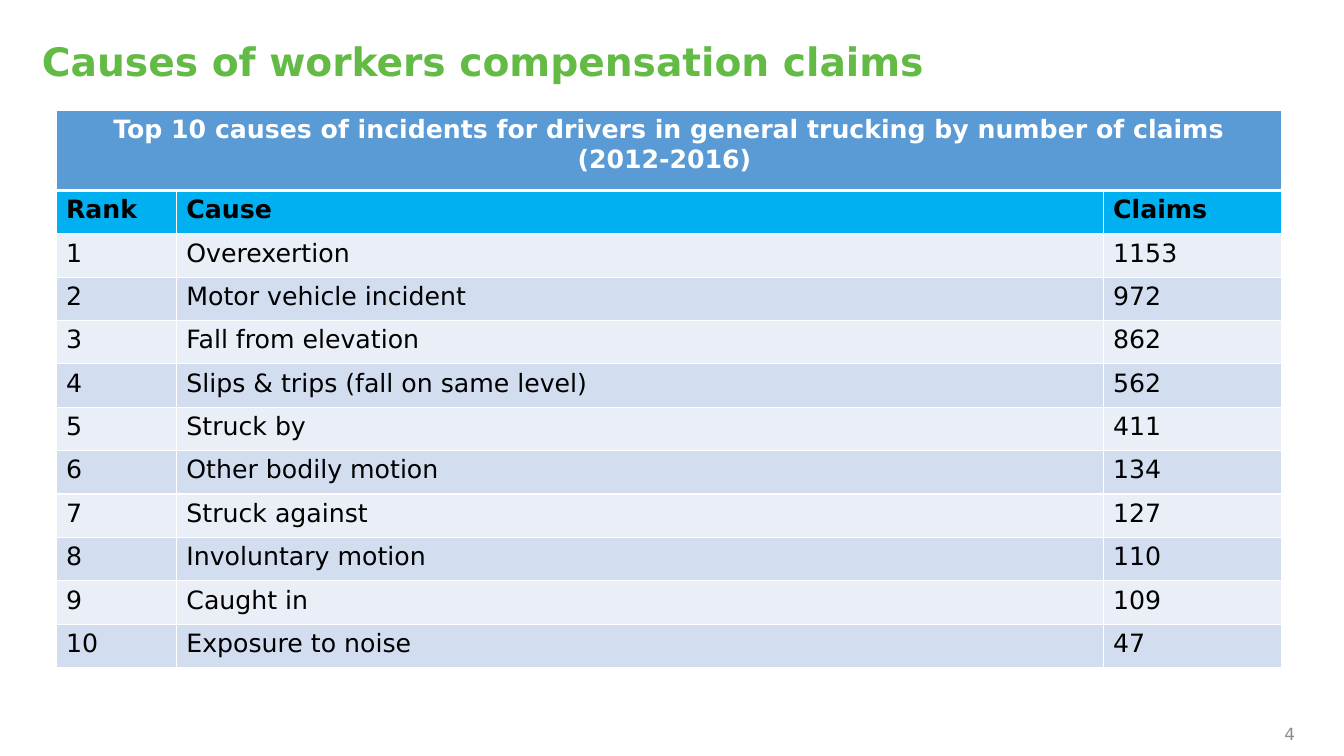
from lxml import etree
from pptx import Presentation
from pptx.dml.color import RGBColor
from pptx.enum import text
from pptx.oxml import ns
from pptx.util import Pt

FONT = "DejaVu Sans"
WHITE = RGBColor(0xFF, 0xFF, 0xFF)
BLACK = RGBColor(0x00, 0x00, 0x00)
GREEN = RGBColor(0x63, 0xBB, 0x46)
GRAY = RGBColor(0x8C, 0x8C, 0x8C)
BLUE = RGBColor(0x5B, 0x9B, 0xD5)
CYAN = RGBColor(0x00, 0xB0, 0xF0)
BANDS = (RGBColor(0xEA, 0xEF, 0xF7), RGBColor(0xD2, 0xDE, 0xEF))

CAPTION = "Top 10 causes of incidents for drivers in general trucking by number of claims (2012-2016) "
HEADINGS = ("Rank", "Cause", "Claims")
CLAIMS = (
    ("Overexertion", 1153),
    ("Motor vehicle incident", 972),
    ("Fall from elevation", 862),
    ("Slips & trips (fall on same level)", 562),
    ("Struck by", 411),
    ("Other bodily motion", 134),
    ("Struck against", 127),
    ("Involuntary motion", 110),
    ("Caught in", 109),
    ("Exposure to noise", 47),
)
COLUMN_WIDTHS = (86, 662, 127.5)
CAPTION_HEIGHT, ROW_HEIGHT = 57, 31


def set_attrs(obj, values):
    for name, value in values.items():
        setattr(obj, name, value)


def write(tf, words, size, color, bold=False, align=text.PP_ALIGN.LEFT):
    p = tf.paragraphs[0]
    p.alignment = align
    r = p.add_run()
    r.text = words
    set_attrs(r.font, {"name": FONT, "size": Pt(size), "bold": bold})
    r.font.color.rgb = color
    return p


def add_label(s, box, words, anchor, **style):
    tf = s.shapes.add_textbox(*map(Pt, box)).text_frame
    set_attrs(tf, {
        "word_wrap": True, "vertical_anchor": anchor,
        "margin_left": 0, "margin_right": 0, "margin_top": 0, "margin_bottom": 0,
    })
    return write(tf, words, **style)


def add_borders(cell, widths):
    tc_pr = cell._tc.get_or_add_tcPr()
    for side, width in widths.items():
        ln = etree.SubElement(tc_pr, ns.qn("a:ln" + side), w=str(Pt(width)))
        fill = etree.SubElement(ln, ns.qn("a:solidFill"))
        etree.SubElement(fill, ns.qn("a:srgbClr"), val=str(WHITE))


def fill_row(table, row, values, fill, **style):
    widths = {"L": 1, "R": 1, "T": 3 if row == 1 else 1, "B": 3 if row == 0 else 1}
    for col, value in enumerate(values):
        cell = table.cell(row, col)
        add_borders(cell, widths)
        cell.fill.solid()
        cell.fill.fore_color.rgb = fill
        if value != "":
            write(cell.text_frame, str(value), size=18, **style)


def add_claims_table(s):
    rows = len(CLAIMS) + 2
    height = CAPTION_HEIGHT + ROW_HEIGHT * (rows - 1)
    box = (40, 79, sum(COLUMN_WIDTHS), height)
    table = s.shapes.add_table(rows, len(HEADINGS), *map(Pt, box)).table
    for column, width in zip(table.columns, COLUMN_WIDTHS):
        column.width = Pt(width)
    for row in table.rows:
        row.height = Pt(ROW_HEIGHT)
    table.rows[0].height = Pt(CAPTION_HEIGHT)
    table.cell(0, 0).merge(table.cell(0, 2))
    fill_row(table, 0, (CAPTION, "", ""), BLUE, color=WHITE, bold=True,
             align=text.PP_ALIGN.CENTER)
    fill_row(table, 1, HEADINGS, CYAN, color=BLACK, bold=True)
    for rank, claim in enumerate(CLAIMS, 1):
        fill_row(table, rank + 1, (rank, *claim), BANDS[(rank - 1) % 2], color=BLACK)


def main():
    prs = Presentation()
    set_attrs(prs, {"slide_width": Pt(960), "slide_height": Pt(540)})
    s = prs.slides.add_slide(prs.slide_layouts[6])
    title = add_label(s, (30, 27, 846, 37), "Causes of workers compensation claims",
                      text.MSO_ANCHOR.MIDDLE, size=28, color=GREEN, bold=True)
    title.line_spacing = 0.9
    add_label(s, (709, 502, 216, 29), "4", text.MSO_ANCHOR.BOTTOM,
              size=12, color=GRAY, align=text.PP_ALIGN.RIGHT)
    add_claims_table(s)
    prs.save("out.pptx")


if __name__ == "__main__":
    main()
